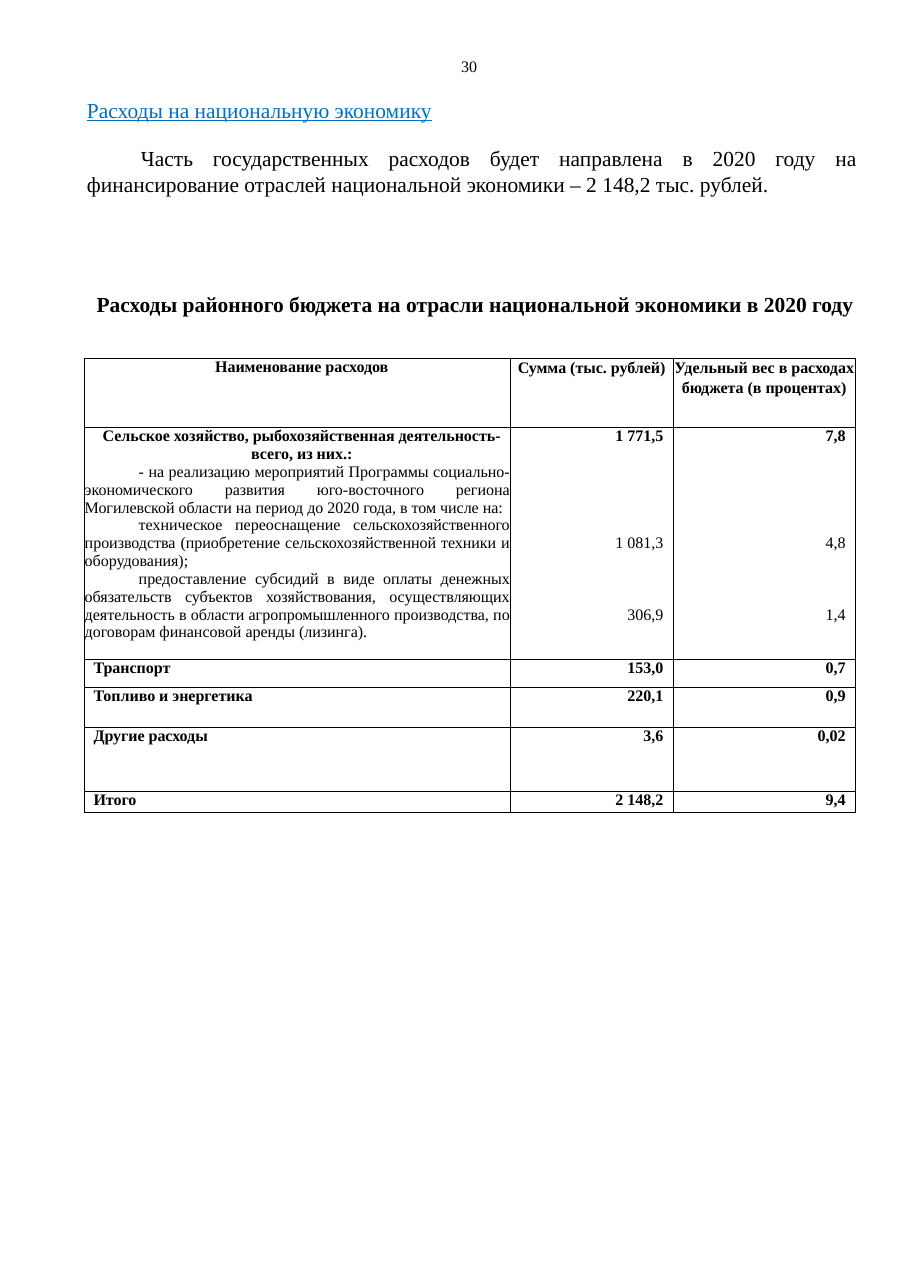
from lxml import etree
from pptx import Presentation
from pptx import util as u
from pptx.dml.color import RGBColor
from pptx.enum import text
from pptx.oxml.ns import qn

BLACK = RGBColor(0x00, 0x00, 0x00)
BLUE = RGBColor(0x00, 0x70, 0xC0)
FONT = "Times New Roman"
LEFT, CENTER = text.PP_ALIGN.LEFT, text.PP_ALIGN.CENTER
RIGHT, JUSTIFY = text.PP_ALIGN.RIGHT, text.PP_ALIGN.JUSTIFY

prs = Presentation()
prs.slide_width, prs.slide_height = u.Inches(8.27), u.Inches(11.69)
PX, PY = prs.slide_width / 100, prs.slide_height / 100  # one percent of the page
MARGIN, TEXT_W = 9.3, 84.8


def write(p, words, size, align=LEFT, bold=False, color=BLACK, margin=0, indent=0):
    p.text = words
    p.alignment = align
    p.font.name, p.font.size, p.font.bold = FONT, u.Pt(size), bold
    p.font.color.rgb = color
    pPr = p._p.get_or_add_pPr()
    pPr.set("marL", str(u.Inches(margin)))
    pPr.set("indent", str(u.Inches(indent)))


def setup(sp, left, top, width, height):
    sp.left, sp.top = int(left * PX), int(top * PY)
    sp.width, sp.height = int(width * PX), int(height * PY)
    tf = sp.text_frame
    tf.margin_left = tf.margin_right = tf.margin_top = tf.margin_bottom = 0
    tf.vertical_anchor = text.MSO_ANCHOR.TOP
    tf.auto_size = text.MSO_AUTO_SIZE.NONE
    tf.word_wrap = True
    return tf


s = prs.slides.add_slide(prs.slide_layouts[1])

# Page number
tf = setup(s.shapes.add_textbox(0, 0, 0, 0), 50.5, 4.36, 2.5, 1.3)
write(tf.paragraphs[0], "30", 10.5, margin=0.01)

# Section title
tf = setup(s.shapes.title, MARGIN, 7.53, TEXT_W, 2.1)
p = tf.paragraphs[0]
write(p, "Расходы на национальную экономику", 14, JUSTIFY, color=BLUE, margin=0.02)
p.font.underline = True

# Introduction and table heading
tf = setup(s.placeholders[1], MARGIN, 11.2, TEXT_W, 15.9)
intro, heading = tf.paragraphs[0], tf.add_paragraph()
write(intro, "Часть государственных расходов будет направлена в 2020 году на финансирование "
      "отраслей национальной экономики – 2 148,2 тыс. рублей.",
      14, JUSTIFY, margin=0.02, indent=0.49)
write(heading, "Расходы районного бюджета на отрасли национальной экономики в 2020 году",
      14, CENTER, bold=True, margin=0.08)
for p, line, before, after in [(intro, 17.3, 0, 6.3), (heading, 17, 55, 10.5)]:
    p.line_spacing = u.Pt(line)
    p.space_before, p.space_after = u.Pt(before), u.Pt(after)
    etree.SubElement(p._p.pPr, qn("a:buNone"))
    p._p.pPr.insert(3, p._p.pPr.find(qn("a:buNone")))

# Table contents: each cell is a list of paragraphs
rows = [
    (["Наименование расходов"], ["Сумма (тыс. рублей)"],
     ["Удельный вес в расходах бюджета (в процентах)"]),
    (["Сельское хозяйство, рыбохозяйственная деятельность-всего, из них.:",
      "- на реализацию мероприятий Программы социально-экономического развития "
      "юго-восточного региона Могилевской области на период до 2020 года, в том числе на:",
      "техническое переоснащение сельскохозяйственного производства (приобретение "
      "сельскохозяйственной техники и оборудования);",
      "предоставление субсидий в виде оплаты денежных обязательств субъектов "
      "хозяйствования, осуществляющих деятельность в области агропромышленного "
      "производства, по договорам финансовой аренды (лизинга)."],
     ["1 771,5", "1 081,3", "306,9"], ["7,8", "4,8", "1,4"]),
    (["Транспорт"], ["153,0"], ["0,7"]),
    (["Топливо и энергетика"], ["220,1"], ["0,9"]),
    (["Другие расходы"], ["3,6"], ["0,02"]),
    (["Итого"], ["2 148,2"], ["9,4"]),
]
col_shares = [46.7, 17.9, 20]
row_shares = [5.39, 17.97, 2.22, 3.1, 4.97, 1.64]
LINE = 11.65  # height of one table text line, points
GAPS = [0, 5 * LINE, 3 * LINE]  # amounts line up with the items beside them

# Table
table = s.shapes.add_table(len(rows), len(col_shares), int(MARGIN * PX), int(27.8 * PY),
                           int(sum(col_shares) * PX), int(sum(row_shares) * PY)).table
table.first_row = table.horz_banding = False
for col, share in zip(table.columns, col_shares):
    col.width = int(share * PX)
for row, share in zip(table.rows, row_shares):
    row.height = int(share * PY)

for i, row in enumerate(rows):
    for j, paragraphs in enumerate(row):
        cell = table.cell(i, j)
        cell.margin_left = cell.margin_right = cell.margin_top = cell.margin_bottom = 0
        if i and j:
            cell.margin_right = u.Inches(0.09)
        tf = cell.text_frame
        for k, words in enumerate(paragraphs):
            p = tf.add_paragraph() if k else tf.paragraphs[0]
            if j and i:
                write(p, words, 10.5, RIGHT, bold=k == 0)
                p.space_before = u.Pt(GAPS[k])
            elif k:
                write(p, words, 10.5, JUSTIFY, indent=0.49)
            else:
                write(p, words, 10.5, CENTER if i < 2 else LEFT, bold=True,
                      margin=0 if j else 0.08)
            if i == 0 and j:
                p.line_spacing = u.Pt((12.5, 12.7)[j - 1])

        # Borders, heavier between the summary rows
        cell.fill.background()
        tcPr = cell._tc.get_or_add_tcPr()
        widths = {"lnL": 0.5, "lnR": 0.5, "lnT": 1 if i > 2 else 0.5,
                  "lnB": 1 if 2 <= i < 5 else 0.5}
        for n, (side, width) in enumerate(widths.items()):
            ln = etree.Element(qn("a:" + side), w=str(u.Pt(width)))
            fill = etree.SubElement(ln, qn("a:solidFill"))
            etree.SubElement(fill, qn("a:srgbClr"), val=str(BLACK))
            tcPr.insert(n, ln)

prs.save("out.pptx")
